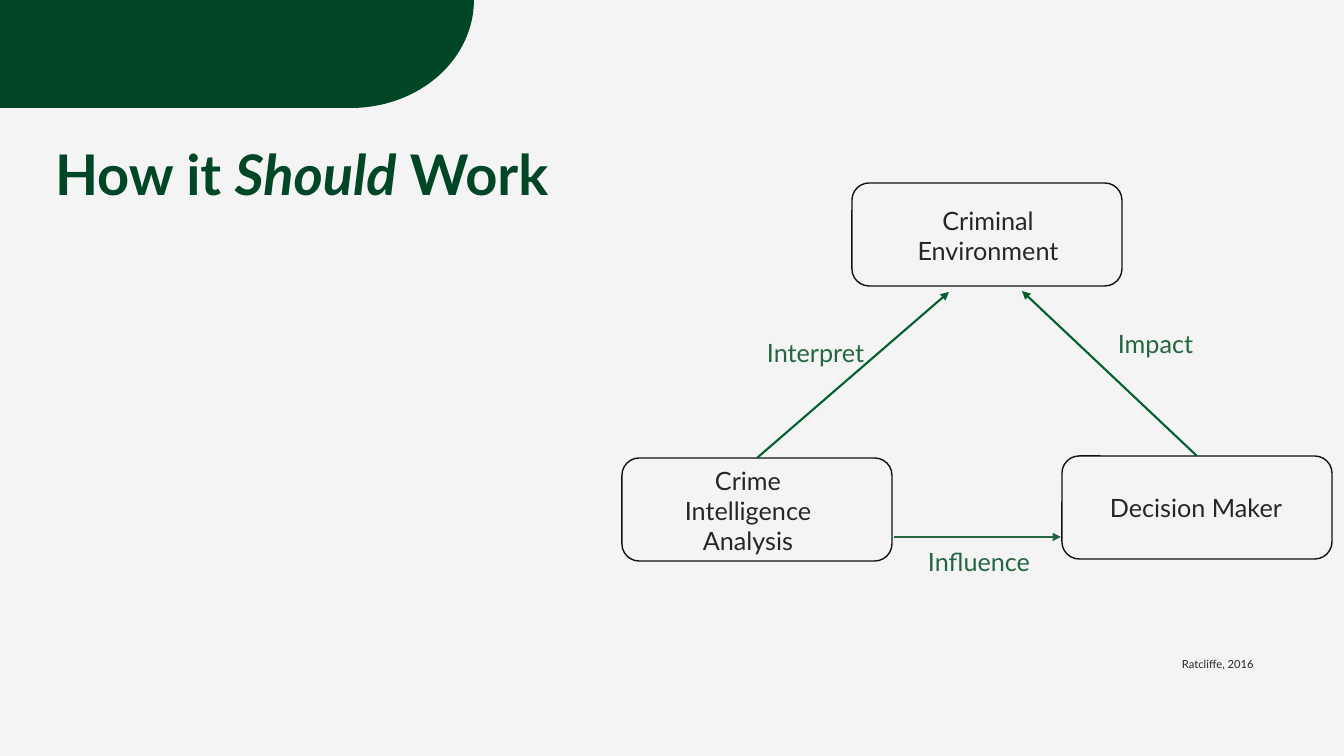
"""Build a slide on how crime intelligence, decisions and the criminal environment interact."""
from dataclasses import dataclass
from math import cos, pi, sin
from typing import Optional

from lxml import etree
from pptx import Presentation
from pptx.dml.color import RGBColor
from pptx.enum.shapes import MSO_CONNECTOR, MSO_SHAPE
from pptx.enum.text import MSO_ANCHOR, PP_ALIGN
from pptx.oxml.ns import qn
from pptx.util import Emu, Pt

STRAIGHT = MSO_CONNECTOR.STRAIGHT
ROUNDED = MSO_SHAPE.ROUNDED_RECTANGLE
LEFT, CENTER = PP_ALIGN.LEFT, PP_ALIGN.CENTER
MIDDLE = MSO_ANCHOR.MIDDLE
TOP_SITE = 0

BACKGROUND = RGBColor(0xF4, 0xF4, 0xF4)
DARK_GREEN = RGBColor(0x01, 0x47, 0x25)
ARROW_GREEN = RGBColor(0x02, 0x60, 0x2F)
LABEL_GREEN = RGBColor(0x24, 0x66, 0x41)
OUTLINE = RGBColor(0x11, 0x11, 0x11)
INK = RGBColor(0x26, 0x26, 0x26)

FONT = "Lato"
EMU_PER_PX = 914400 / 100.8
SLIDE_W, SLIDE_H = 1344, 756
BOX_W, BOX_H = 270, 103
BANNER_W, BANNER_H, BANNER_CURVE_X = 474, 108, 351
CURVE_STEPS = 48


@dataclass(frozen=True)
class Label:
    """A text box with one style."""
    text: str
    left: int
    top: int
    width: int
    height: int
    color: RGBColor = INK
    size: int = 18
    align: PP_ALIGN = LEFT


@dataclass(frozen=True)
class Arrow:
    """An arrow that may start at the top of a named box."""
    x1: int
    y1: int
    x2: int
    y2: int
    color: RGBColor = ARROW_GREEN
    source: Optional[str] = None


BOXES = {"environment": (852, 183), "analysis": (622, 458), "decision": (1062, 456)}

ARROWS = [
    Arrow(757, 458, 949, 292, source="analysis"),
    Arrow(1197, 456, 1022, 291, source="decision"),
    Arrow(894, 537, 1061, 537, LABEL_GREEN),
]

LABELS = [
    Label("Criminal Environment", 865, 200, 246, 72, align=CENTER),
    Label("Crime\nIntelligence\nAnalysis", 625, 460, 246, 102, align=CENTER),
    Label("Decision Maker", 1100, 487, 244, 40),
    Label("Ratcliffe, 2016", 1172, 652, 127, 24, size=8),
    Label("Interpret", 757, 332, 158, 40, LABEL_GREEN),
    Label("Impact", 1108, 323, 215, 41, LABEL_GREEN),
    Label("Influence", 900, 541, 158, 40, LABEL_GREEN, align=CENTER),
]


def px(value: float) -> Emu:
    """Turn pixels into EMU."""
    return Emu(round(value * EMU_PER_PX))


def style_run(r, size: int, color: RGBColor) -> None:
    """Set the font of a run."""
    r.font.name = FONT
    r.font.size = Pt(size)
    r.font.color.rgb = color


def add_banner(slide) -> None:
    """Draw the corner banner with its rounded lower right end."""
    angles = [pi / 2 * i / CURVE_STEPS for i in range(CURVE_STEPS + 1)]
    radius = BANNER_W - BANNER_CURVE_X
    curve = [(px(BANNER_CURVE_X + radius * cos(a)), px(BANNER_H * sin(a))) for a in angles]
    builder = slide.shapes.build_freeform(0, 0)
    builder.add_line_segments(curve + [(0, px(BANNER_H))], close=True)
    sp = builder.convert_to_shape()
    sp.shadow.inherit = False
    sp.fill.solid()
    sp.fill.fore_color.rgb = DARK_GREEN
    sp.line.fill.background()


def add_title(slide) -> None:
    """Write the title with its stressed word in italics."""
    tf = slide.shapes.add_textbox(px(55), px(147), px(570), px(61)).text_frame
    tf.word_wrap = True
    tf.vertical_anchor = MIDDLE
    tf.margin_left = tf.margin_right = tf.margin_top = tf.margin_bottom = 0
    p = tf.paragraphs[0]
    p.line_spacing = 0.9
    for text, italic in (("How it ", False), ("Should", True), (" Work", False)):
        r = p.add_run()
        r.text = text
        style_run(r, 40, DARK_GREEN)
        r.font.bold = True
        r.font.italic = italic


def add_box(slide, left: int, top: int):
    """Draw an outlined rounded box."""
    sp = slide.shapes.add_shape(ROUNDED, px(left), px(top), px(BOX_W), px(BOX_H))
    sp.shadow.inherit = False
    sp.fill.background()
    sp.line.color.rgb = OUTLINE
    sp.line.width = Pt(1)
    return sp


def add_arrow(slide, arrow: Arrow, boxes: dict) -> None:
    """Draw an arrow and join it to its source box."""
    points = (arrow.x1, arrow.y1, arrow.x2, arrow.y2)
    line = slide.shapes.add_connector(STRAIGHT, *map(px, points))
    if arrow.source:
        line.begin_connect(boxes[arrow.source], TOP_SITE)
    line.line.color.rgb = arrow.color
    line.line.width = Pt(1.5)
    etree.SubElement(line.line._get_or_add_ln(), qn("a:tailEnd"), type="triangle")
    etree.SubElement(line._element.spPr, qn("a:effectLst"))


def add_label(slide, label: Label) -> None:
    """Write a label in a wrapping text box."""
    frame = (label.left, label.top, label.width, label.height)
    tf = slide.shapes.add_textbox(*map(px, frame)).text_frame
    tf.word_wrap = True
    tf.text = label.text
    for p in tf.paragraphs:
        p.alignment = label.align
        for r in p.runs:
            style_run(r, label.size, label.color)


def main() -> None:
    """Build and save the slide."""
    prs = Presentation()
    prs.slide_width, prs.slide_height = px(SLIDE_W), px(SLIDE_H)
    slide = prs.slides.add_slide(prs.slide_layouts[6])
    slide.background.fill.solid()
    slide.background.fill.fore_color.rgb = BACKGROUND
    add_banner(slide)
    add_title(slide)
    boxes = {name: add_box(slide, *corner) for name, corner in BOXES.items()}
    for arrow in ARROWS:
        add_arrow(slide, arrow, boxes)
    for label in LABELS:
        add_label(slide, label)
    prs.save("out.pptx")


if __name__ == "__main__":
    main()
